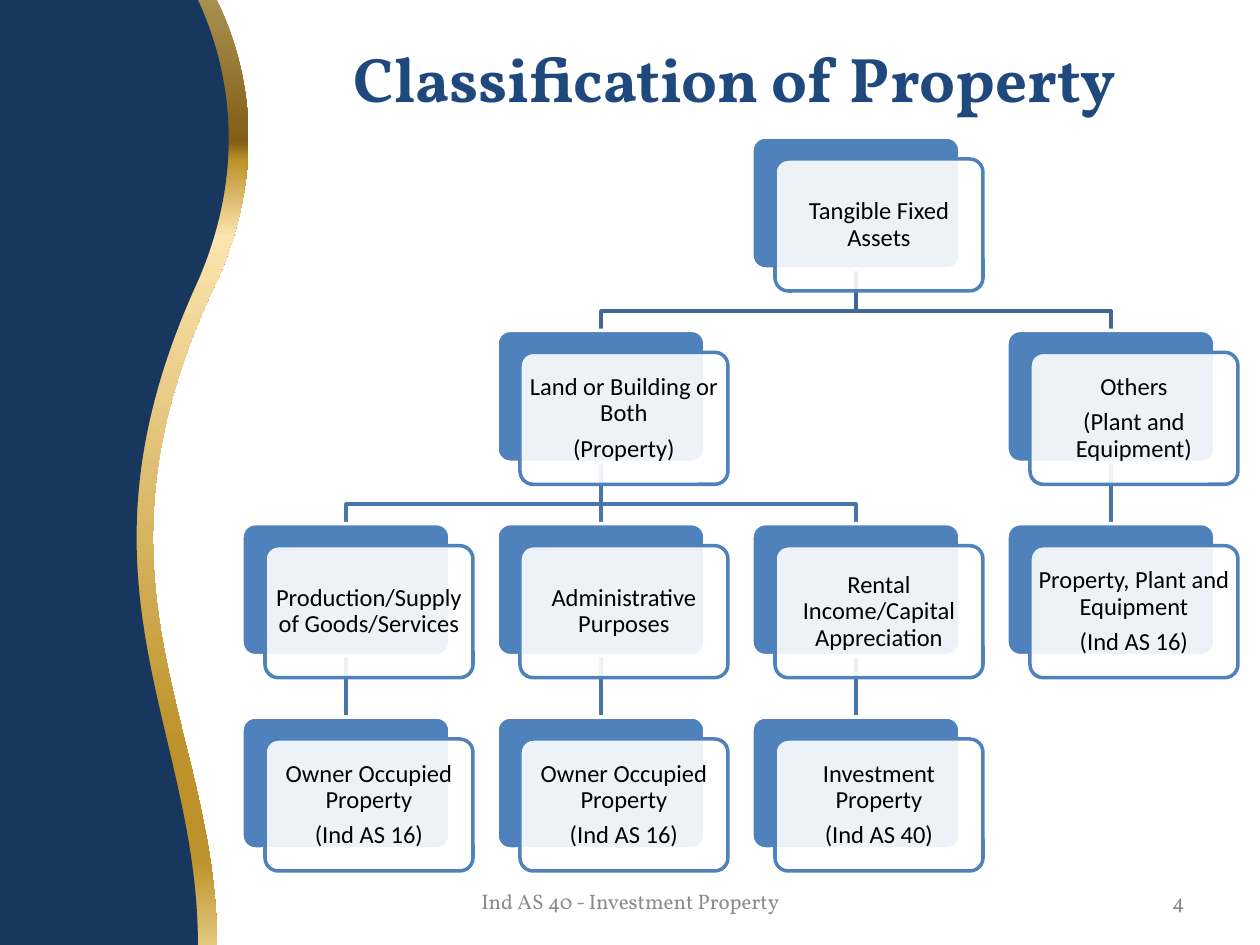
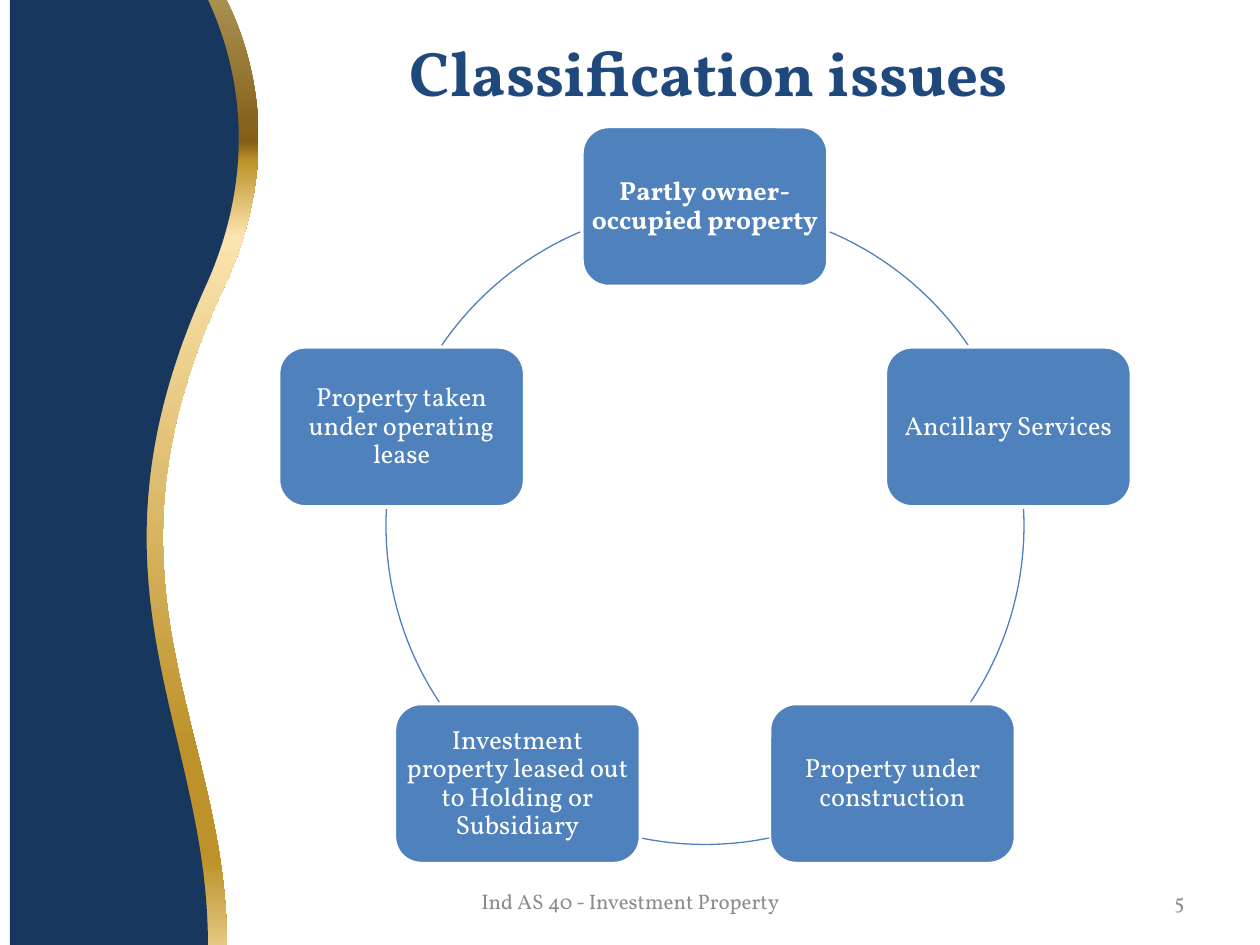
import math

import lxml.etree
import pptx
import pptx.dml.color
import pptx.enum.shapes
import pptx.enum.text
import pptx.oxml.ns
import pptx.util

PX = 7257  # EMU in one px, 126 px to the inch
COLORS = {
    "navy": "17375E", "title": "1F497D", "box": "4F81BD", "white": "FFFFFF",
    "black": "000000", "footer": "8C8C8C", "top link": "3F6797", "link": "4875AC",
}
RGB = {name: pptx.dml.color.RGBColor.from_string(value) for name, value in COLORS.items()}
GOLD_STOPS = [(0, "A8904F"), (15, "835E17"), (17, "BD922A"), (25, "FBE4AE"),
              (79, "BD922A"), (91, "BD922A"), (100, "E3C880")]
SHAPE = pptx.enum.shapes.MSO_SHAPE
ALIGN = pptx.enum.text.PP_ALIGN
qn = pptx.oxml.ns.qn


def write_text(shape, text, size, color, font="Vollkorn", bold=False,
               align=ALIGN.CENTER, inset=None, line_spacing=1.0, space_after=0):
    """Fill a shape with text, one paragraph to each line of it."""
    frame = shape.text_frame
    frame.text = text
    frame.word_wrap = True
    frame.auto_size = pptx.enum.text.MSO_AUTO_SIZE.NONE
    frame.vertical_anchor = pptx.enum.text.MSO_ANCHOR.MIDDLE
    if inset is not None:
        frame.margin_left = frame.margin_right = inset * PX
        frame.margin_top = frame.margin_bottom = inset * PX
    for paragraph in frame.paragraphs:
        paragraph.alignment = align
        paragraph.line_spacing = line_spacing
        paragraph.space_after = pptx.util.Pt(space_after)
        paragraph.font.name = font
        paragraph.font.size = pptx.util.Pt(size)
        paragraph.font.bold = bold
        paragraph.font.color.rgb = RGB[color]


def add_box(slide, left, top, width, height, fill, line):
    box = slide.shapes.add_shape(SHAPE.ROUNDED_RECTANGLE, round(left * PX),
                                 round(top * PX), width * PX, height * PX)
    box.shadow.inherit = False
    box.fill.solid()
    box.fill.fore_color.rgb = RGB[fill]
    box.line.color.rgb = RGB[line]
    box.line.width = pptx.util.Pt(2)
    return box


presentation = pptx.Presentation()
presentation.slide_width = pptx.util.Inches(10)
presentation.slide_height = pptx.util.Inches(7.5)

# Title, wave and footer of every slide
SLIDES = [("Classification of Property", (273, 38, 924, 78), 0, "4"),
          ("Classification issues", (284, 38, 850, 67), 10, "5")]
# Left edge, top of the right edge, then three Bezier points for each of two curves
WAVES = {
    "gold": (10, (217, 0), [(256, 82), (262, 180), (217, 281),
                            (73, 582), (217, 723), (217, 945)]),
    "navy": (0, (198, 0), [(236, 82), (242, 180), (198, 281),
                           (60, 582), (198, 723), (198, 945)]),
}

for title, title_place, wave_shift, number in SLIDES:
    slide = presentation.slides.add_slide(presentation.slide_layouts[5])
    heading = slide.shapes.title
    heading.left, heading.top, heading.width, heading.height = (v * PX for v in title_place)
    write_text(heading, title, 36, "title", bold=True)

    for name, (left, corner, curve_points) in WAVES.items():
        builder = slide.shapes.build_freeform(left + wave_shift, 0, scale=PX)
        outline = [corner, *curve_points]
        builder.add_line_segments(
            [(x + wave_shift, y) for x, y in outline] + [(left + wave_shift, 945)], close=True)
        wave = builder.convert_to_shape()
        # Join each three curve points into one Bezier segment
        segments = list(wave._element.iter(qn("a:lnTo")))
        for first in (1, 4):
            curve = lxml.etree.Element(qn("a:cubicBezTo"))
            segments[first].addprevious(curve)
            for segment in segments[first:first + 3]:
                curve.append(segment[0])
                segment.getparent().remove(segment)
        wave.shadow.inherit = False
        wave.line.fill.background()
        if name == "navy":
            wave.fill.solid()
            wave.fill.fore_color.rgb = RGB["navy"]
        else:
            wave.fill.gradient()
            wave.fill.gradient_angle = 270
            stops = wave._element.spPr.find(".//" + qn("a:gsLst"))
            for stop in list(stops):
                stops.remove(stop)
            for position, color in GOLD_STOPS:
                stop = lxml.etree.SubElement(stops, qn("a:gs"), pos=str(position * 1000))
                lxml.etree.SubElement(stop, qn("a:srgbClr"), val=color)

    for text, left, width, align in [
            ("Ind AS 40 - Investment Property", 431, 399, ALIGN.CENTER),
            (number, 903, 294, ALIGN.RIGHT)]:
        footer = slide.shapes.add_textbox(left * PX, 876 * PX, width * PX, 50 * PX)
        write_text(footer, text, 12, "footer", align=align)

tree_slide, cycle_slide = presentation.slides

# Tree of property classes: (column, row) of each node, and the node above it
NODES = {
    (2, 0): ("Tangible Fixed Assets", None),
    (1, 1): ("Land or Building or Both\n(Property)", (2, 0)),
    (3, 1): ("Others\n(Plant and Equipment)", (2, 0)),
    (0, 2): ("Production/Supply of Goods/Services", (1, 1)),
    (1, 2): ("Administrative Purposes", (1, 1)),
    (2, 2): ("Rental Income/Capital Appreciation", (1, 1)),
    (3, 2): ("Property, Plant and Equipment\n(Ind AS 16)", (3, 1)),
    (0, 3): ("Owner Occupied Property\n(Ind AS 16)", (0, 2)),
    (1, 3): ("Owner Occupied Property\n(Ind AS 16)", (1, 2)),
    (2, 3): ("Investment Property\n(Ind AS 40)", (2, 2)),
}
COLUMN_LEFTS = [242 + 255 * column for column in range(4)]
ROW_TOPS = [137 + 580 * row / 3 for row in range(4)]
NODE_WIDTH, NODE_HEIGHT = 208, 132
backs = {}
for (column, row), (text, parent) in NODES.items():
    left, top = COLUMN_LEFTS[column], ROW_TOPS[row]
    back = add_box(tree_slide, left, top, NODE_WIDTH, NODE_HEIGHT, "box", "white")
    front = add_box(tree_slide, left + 23, top + 22, NODE_WIDTH, NODE_HEIGHT, "white", "box")
    back.adjustments[0] = front.adjustments[0] = 0.1
    white = front._element.spPr.find(".//" + qn("a:srgbClr"))
    lxml.etree.SubElement(white, qn("a:alpha"), val="90000")
    write_text(front, text, 14, "black", font="Calibri", inset=2,
               line_spacing=0.9, space_after=5)
    backs[column, row] = back

for child, (text, parent) in NODES.items():
    if parent is None:
        continue
    upper, lower = backs[parent], backs[child]
    start_x, start_y = upper.left + upper.width // 2, upper.top + upper.height
    end_x, end_y = lower.left + lower.width // 2, lower.top
    if start_x == end_x:
        link = tree_slide.shapes.add_connector(
            pptx.enum.shapes.MSO_CONNECTOR.STRAIGHT, start_x, start_y, end_x, end_y)
        link.begin_connect(upper, 2)
        link.end_connect(lower, 0)
        lxml.etree.SubElement(link._element.spPr, qn("a:effectLst"))
    else:
        bend_y = start_y + 42 * PX
        builder = tree_slide.shapes.build_freeform(start_x, start_y)
        builder.add_line_segments(
            [(start_x, bend_y), (end_x, bend_y), (end_x, end_y)], close=False)
        link = builder.convert_to_shape()
        link.shadow.inherit = False
        link.fill.background()
    link.line.color.rgb = RGB["top link" if parent[1] == 0 else "link"]
    link.line.width = pptx.util.Pt(2)
    tree_slide.shapes.title._element.addnext(link._element)  # behind the boxes

# Cycle of issues, clockwise from the top, with an arc after each one
ISSUES = [
    ("Partly owner-occupied property", 293, 325.6),
    ("Ancillary Services", 357, 33.6),
    ("Property under construction", 78.4, 101.6),
    ("Investment property leased out to Holding or Subsidiary", 146.4, 183),
    ("Property taken under operating lease", 214.4, 247),
]
CENTER_X, CENTER_Y, RADIUS = 705, 525.5, 319
ISSUE_WIDTH, ISSUE_HEIGHT = 246, 160
for index, (text, arc_start, arc_end) in enumerate(ISSUES):
    angle = math.radians(360 / len(ISSUES) * index - 90)
    left = CENTER_X + RADIUS * math.cos(angle) - ISSUE_WIDTH / 2
    top = CENTER_Y + RADIUS * math.sin(angle) - ISSUE_HEIGHT / 2
    box = add_box(cycle_slide, left, top, ISSUE_WIDTH, ISSUE_HEIGHT, "box", "white")
    write_text(box, text, 15, "white", bold=index == 0, inset=0,
               line_spacing=0.9, space_after=5)

    arc = cycle_slide.shapes.add_shape(
        SHAPE.ARC, (CENTER_X - RADIUS) * PX, round((CENTER_Y - RADIUS) * PX),
        2 * RADIUS * PX, 2 * RADIUS * PX)
    arc.adjustments[0] = arc_start * 0.6  # 60000 units to a degree, scaled by 100000
    arc.adjustments[1] = arc_end * 0.6
    arc.shadow.inherit = False
    arc.fill.background()
    arc.line.color.rgb = RGB["box"]
    arc.line.width = pptx.util.Pt(0.75)

presentation.save("out.pptx")
